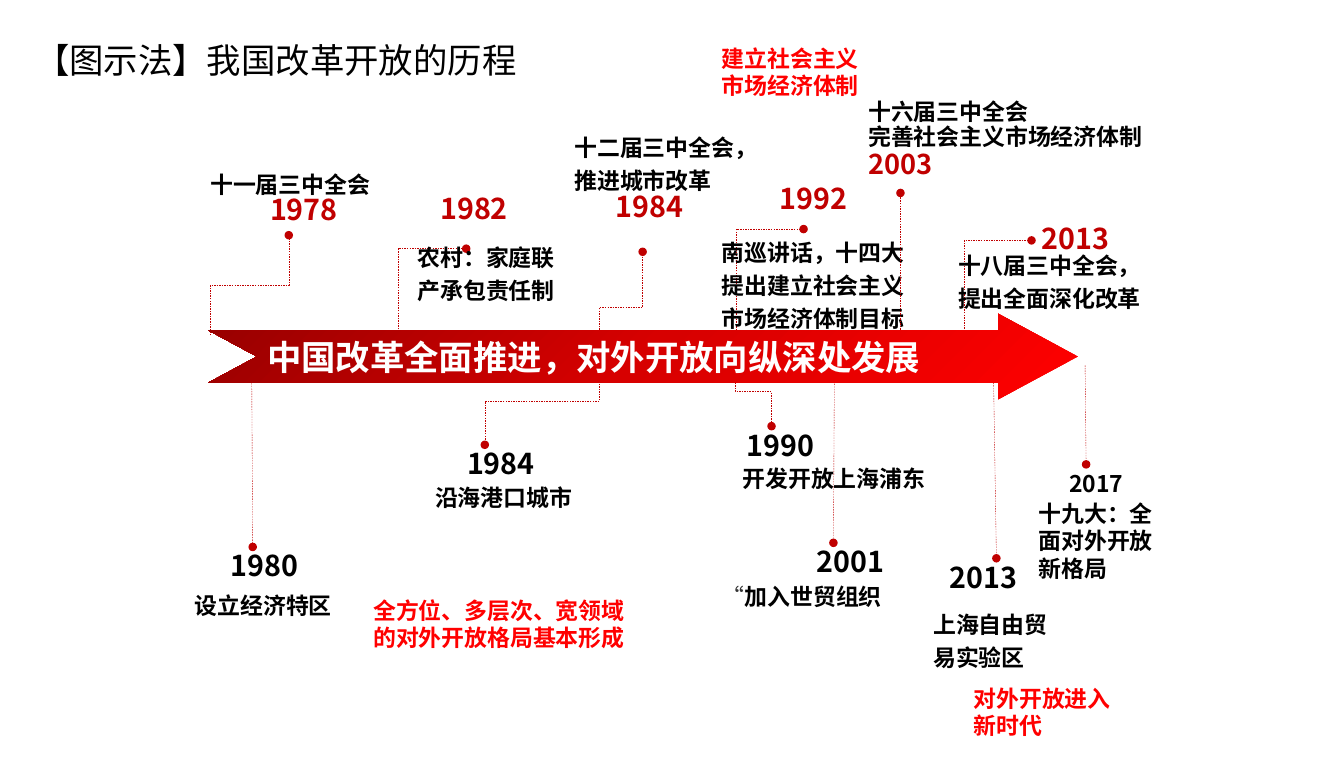
from dataclasses import dataclass

from lxml import etree
from pptx import Presentation
from pptx.dml.color import RGBColor
from pptx.enum import dml, shapes, text
from pptx.oxml import parse_xml
from pptx.oxml.ns import nsdecls, qn
from pptx.util import Inches, Pt

FONT = "Noto Sans CJK SC"
BLACK = RGBColor(0x00, 0x00, 0x00)
GREY = RGBColor(0x33, 0x33, 0x33)
WHITE = RGBColor(0xFF, 0xFF, 0xFF)
RED = RGBColor(0xFF, 0x00, 0x00)
CRIMSON = RGBColor(0xC0, 0x00, 0x00)
MAROON = RGBColor(0x97, 0x00, 0x00)
SCARLET = RGBColor(0xD7, 0x00, 0x00)


@dataclass
class Run:
    text: str
    size: int = 16
    color: RGBColor = BLACK
    bold: bool = True


@dataclass
class Milestone:
    year: Run
    at: tuple
    caption: list
    caption_box: tuple
    leader: tuple
    bend: float = 0.5
    spacing: float = 1.2


YEARS_UP = {"size": 20, "color": CRIMSON}
YEARS_DOWN = {"size": 20}

MILESTONES = [
    Milestone(Run("1978", **YEARS_UP), (2.52, 1.85), [[Run("十一届三中全会")]],
              (-0.58, -0.3, 1.98, 0.61), (-0.48, 1.4, 0.28, 0.43)),
    Milestone(Run("1980", **YEARS_DOWN), (2.14, 5.3), [[Run("设立经济特区")]],
              (-0.35, 0.33, 1.73, 0.61), (0.3, -1.81, 0.31, 0)),
    Milestone(Run("1982", **YEARS_UP), (4.17, 1.84), [[Run("农村：家庭联产承包责任制")]],
              (-0.22, 0.42, 1.73, 0.61), (-0.31, 1.65, 0.35, 0.57), bend=1),
    Milestone(Run("1984", **YEARS_UP), (5.87, 1.82),
              [[Run("十二届三中全会，")], [Run("推进城市改革")]],
              (-0.4, -0.63, 2.3, 0.61), (-0.06, 1.7, 0.36, 0.62)),
    Milestone(Run("1984", **YEARS_DOWN), (4.43, 4.31), [[Run("沿海港口城市")]],
              (-0.31, 0.27, 1.73, 0.61), (1.38, -0.84, 0.27, 0)),
    Milestone(Run("1990", **YEARS_DOWN), (7.14, 4.13), [[Run("开发开放上海浦东")]],
              (-0.04, 0.27, 2.01, 0.61), (-0.01, -0.67, 0.34, 0)),
    Milestone(Run("1992", **YEARS_UP), (7.46, 1.74),
              [[Run("南巡讲话，十四大提出建立社会主义市场经济体制目标")]],
              (-0.56, 0.47, 2.13, 1.24), (-0.32, 1.56, 0.33, 0.48), bend=1),
    Milestone(Run("2001", **YEARS_DOWN), (7.82, 5.26),
              [[Run("“", color=GREY, bold=False), Run("加入世贸组织")]],
              (-0.92, 0.28, 2.05, 0.61), (0.27, -1.74, 0.26, 0)),
    Milestone(Run("2013", **YEARS_UP), (10, 2.13), [[Run("十八届三中全会，提出全面深化改革")]],
              (-0.81, 0.21, 2.05, 0.61), (-0.65, 1.28, 0, 0.2), bend=1),
    Milestone(Run("2013", **YEARS_DOWN), (9.11, 5.41), [[Run("上海自由贸易实验区")]],
              (-0.16, 0.4, 1.5, 0.61), (0.52, -1.9, 0.55, 0)),
    Milestone(Run("2017"), (10.27, 4.53), [[Run("十九大：全面对外开放新格局")]],
              (-0.3, 0.26, 1.52, 0.91), (0.25, -0.99, 0.26, -0.03), spacing=1),
]

STAGES = [
    ("全方位、多层次、宽领域的对外开放格局基本形成", (3.52, 5.73, 2.68, 0.64)),
    ("建立社会主义市场经济体制", (6.9, 0.38, 1.73, 0.64)),
    ("对外开放进入新时代", (9.34, 6.58, 1.57, 0.64)),
]


def write(tf, paragraphs, spacing=1):
    for i, runs in enumerate(paragraphs):
        p = tf.add_paragraph() if i else tf.paragraphs[0]
        p.alignment = text.PP_ALIGN.LEFT
        p.line_spacing = spacing
        for run in runs:
            r = p.add_run()
            r.text = run.text
            r.font.name = FONT
            r.font.size = Pt(run.size)
            r.font.bold = run.bold
            r.font.color.rgb = run.color
            etree.SubElement(r.font._element, qn("a:ea")).set("typeface", FONT)


def add_text(slide, box, paragraphs, spacing=1):
    tf = slide.shapes.add_textbox(*map(Inches, box)).text_frame
    tf.word_wrap = True
    write(tf, paragraphs, spacing)


def add_leader(slide, x1, y1, x2, y2, bend=0.5):
    if abs(x2 - x1) < 0.1:
        kind, ends = shapes.MSO_CONNECTOR.STRAIGHT, (x1, y1, x2, y2)
    else:
        kind = shapes.MSO_CONNECTOR.ELBOW
        cx, cy = (x1 + x2) / 2, (y1 + y2) / 2
        half_w, half_h = (x2 - x1) / 2, (y2 - y1) / 2
        ends = (cx - half_h, cy + half_w, cx + half_h, cy - half_w)
    c = slide.shapes.add_connector(kind, *map(Inches, ends))
    sp_pr = c._element.spPr
    if kind == shapes.MSO_CONNECTOR.ELBOW:
        sp_pr.find(qn("a:xfrm")).set("rot", "5400000")
        guides = sp_pr.find(qn("a:prstGeom")).find(qn("a:avLst"))
        gd = etree.SubElement(guides, qn("a:gd"))
        gd.set("name", "adj1")
        gd.set("fmla", f"val {int(bend * 100000)}")
    c.line.color.rgb = CRIMSON
    c.line.width = Pt(0.25)
    c.line.dash_style = dml.MSO_LINE.DASH
    etree.SubElement(c.line._get_or_add_ln(), qn("a:tailEnd")).set("type", "oval")
    etree.SubElement(sp_pr, qn("a:effectLst"))


def add_milestone(slide, m):
    x, y = m.at
    x1, y1, x2, y2 = m.leader
    add_leader(slide, x + x1, y + y1, x + x2, y + y2, m.bend)
    add_text(slide, (x, y, 1, 0.43), [[m.year]], 0.9)
    dx, dy, w, h = m.caption_box
    add_text(slide, (x + dx, y + dy, w, h), m.caption, m.spacing)


def add_market_reform(slide, x, y, w, h):
    add_leader(slide, x + 0.41, y + 2.54, x + 0.41, y + 0.94)
    lines = [Run("十六届三中全会"), Run("完善社会主义市场经济体制"), Run("2003", 19, CRIMSON)]
    add_text(slide, (x, y, w, h), [[line] for line in lines], 0.9)


def add_arrow(slide, box):
    sp = slide.shapes.add_shape(shapes.MSO_SHAPE.NOTCHED_RIGHT_ARROW, *map(Inches, box))
    sp.adjustments[0], sp.adjustments[1] = 0.61, 0.93
    sp.shadow.inherit = False
    sp.line.fill.background()
    stops = "".join(f'<a:gs pos="{pos}"><a:srgbClr val="{color}"/></a:gs>'
                    for pos, color in ((0, MAROON), (50000, SCARLET), (100000, RED)))
    sp._element.spPr.find(qn("a:prstGeom")).addnext(parse_xml(
        f'<a:gradFill {nsdecls("a")} rotWithShape="1"><a:gsLst>{stops}</a:gsLst>'
        '<a:path path="circle"><a:fillToRect r="100000" b="100000"/></a:path></a:gradFill>'))
    tf = sp.text_frame
    tf.word_wrap = True
    tf.vertical_anchor = text.MSO_ANCHOR.MIDDLE
    write(tf, [[Run("中国改革全面推进，对外开放向纵深处发展", 24, WHITE)]])


def add_title(slide, box):
    sp = slide.shapes.title
    sp.left, sp.top, sp.width, sp.height = map(Inches, box)
    tf = sp.text_frame
    tf.margin_left = tf.margin_right = tf.margin_top = tf.margin_bottom = 0
    tf.word_wrap = True
    tf.auto_size = text.MSO_AUTO_SIZE.NONE
    tf.vertical_anchor = text.MSO_ANCHOR.MIDDLE
    write(tf, [[Run("【图示法】我国改革开放的历程", 24, bold=False)]], 1.5)


def main():
    prs = Presentation()
    prs.slide_width, prs.slide_height = Inches(13.03), Inches(7.5)
    slide = prs.slides.add_slide(prs.slide_layouts[5])
    add_title(slide, (0.34, 0.17, 4.92, 0.61))
    for m in MILESTONES:
        add_milestone(slide, m)
    add_market_reform(slide, 8.32, 0.93, 3, 1.17)
    add_arrow(slide, (2.02, 3.04, 8.43, 0.83))
    for label, box in STAGES:
        add_text(slide, box, [[Run(label, color=RED)]])
    prs.save("out.pptx")


if __name__ == "__main__":
    main()
